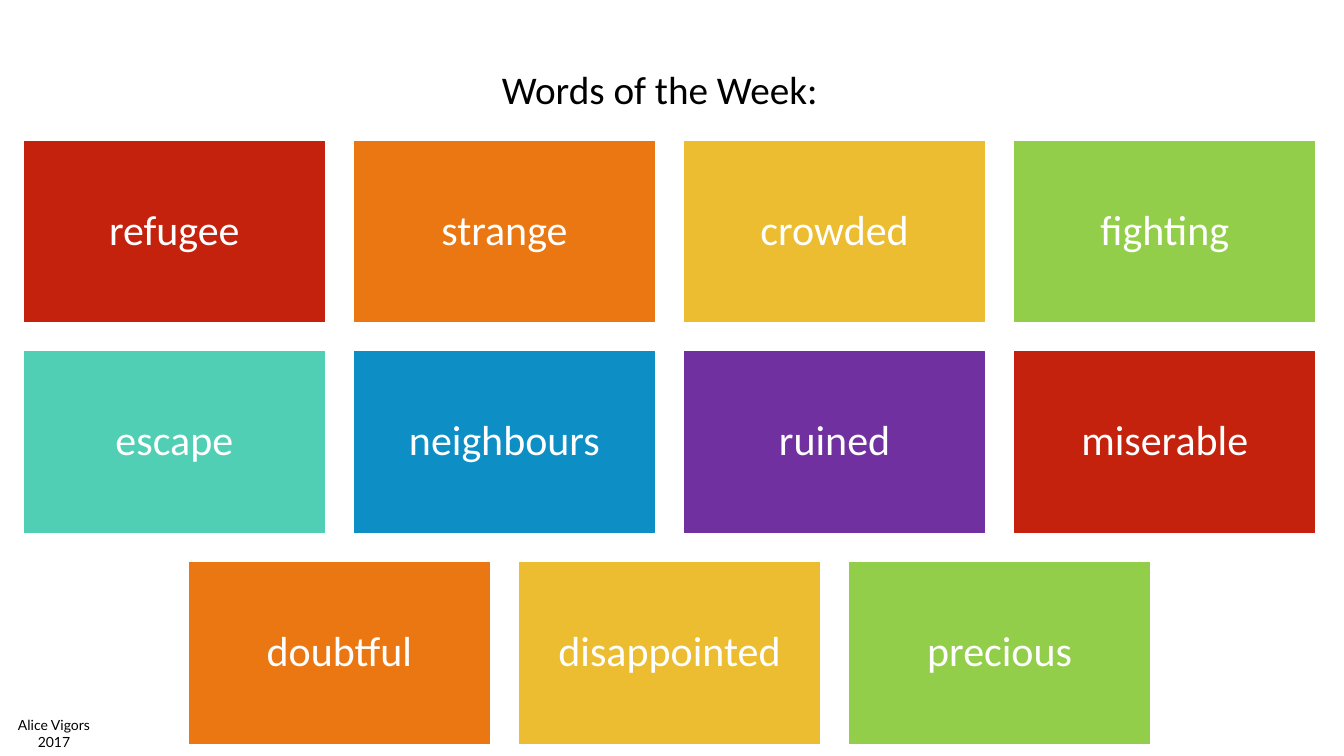
import pptx
import pptx.dml.color
import pptx.enum.shapes
import pptx.enum.text
import pptx.util

Cm = pptx.util.Cm
Pt = pptx.util.Pt
CENTER = pptx.enum.text.PP_ALIGN.CENTER


def color(code):
    return pptx.dml.color.RGBColor.from_string(code)


def add_text(frame, words, font, size, code, align=None):
    frame.word_wrap = True
    para = frame.paragraphs[0]
    para.alignment = align
    span = para.add_run()
    span.text = words
    span.font.name = font
    span.font.size = Pt(size)
    span.font.color.rgb = color(code)
    return para


deck = pptx.Presentation()
deck.slide_width = Cm(33.87)
deck.slide_height = Cm(19.05)
page = deck.slides.add_slide(deck.slide_layouts[6])

# Heading
heading = page.shapes.add_textbox(Cm(12.4), Cm(1.52), Cm(16.26), Cm(1.45))
add_text(heading.text_frame, "Words of the Week:", "Calibri", 28, "000000")
heading.text_frame.auto_size = pptx.enum.text.MSO_AUTO_SIZE.SHAPE_TO_FIT_TEXT

# Word tiles: four to a row, a shorter row is centred
word_rows = [
    ["refugee", "strange", "crowded", "fighting"],
    ["escape", "neighbours", "ruined", "miserable"],
    ["doubtful", "disappointed", "precious"],
]
tile_colors = ["C4220D", "EB7712", "ECBD31", "92CE4A", "50CFB4", "0D8EC5", "7030A0"]
columns = 4
grid_left, grid_top = 0.61, 3.56
tile_width, tile_height = 7.57, 4.55
step_x, step_y = 8.32, 5.31

for row, words in enumerate(word_rows):
    row_left = grid_left + (columns - len(words)) * step_x / 2
    for column, word in enumerate(words):
        tile = page.shapes.add_shape(
            pptx.enum.shapes.MSO_SHAPE.RECTANGLE,
            Cm(row_left + column * step_x), Cm(grid_top + row * step_y),
            Cm(tile_width), Cm(tile_height))
        tile_color = color(tile_colors[(row * columns + column) % len(tile_colors)])
        tile.shadow.inherit = False
        tile.fill.solid()
        tile.fill.fore_color.rgb = tile_color
        tile.line.color.rgb = tile_color
        tile.line.width = Pt(0.75)
        frame = tile.text_frame
        frame.margin_left = frame.margin_right = Cm(0.3)
        frame.margin_top = frame.margin_bottom = Cm(0.3)
        frame.vertical_anchor = pptx.enum.text.MSO_ANCHOR.MIDDLE
        para = add_text(frame, word, "Calibri", 30, "FFFFFF", CENTER)
        para.line_spacing = 0.9

# Author and year
author = page.shapes.add_textbox(Cm(0), Cm(17.93), Cm(2.72), Cm(1.12))
add_text(author.text_frame, "Alice Vigors 2017", "Lato", 10, "000000", CENTER)
author.text_frame.auto_size = pptx.enum.text.MSO_AUTO_SIZE.SHAPE_TO_FIT_TEXT

deck.save("out.pptx")
